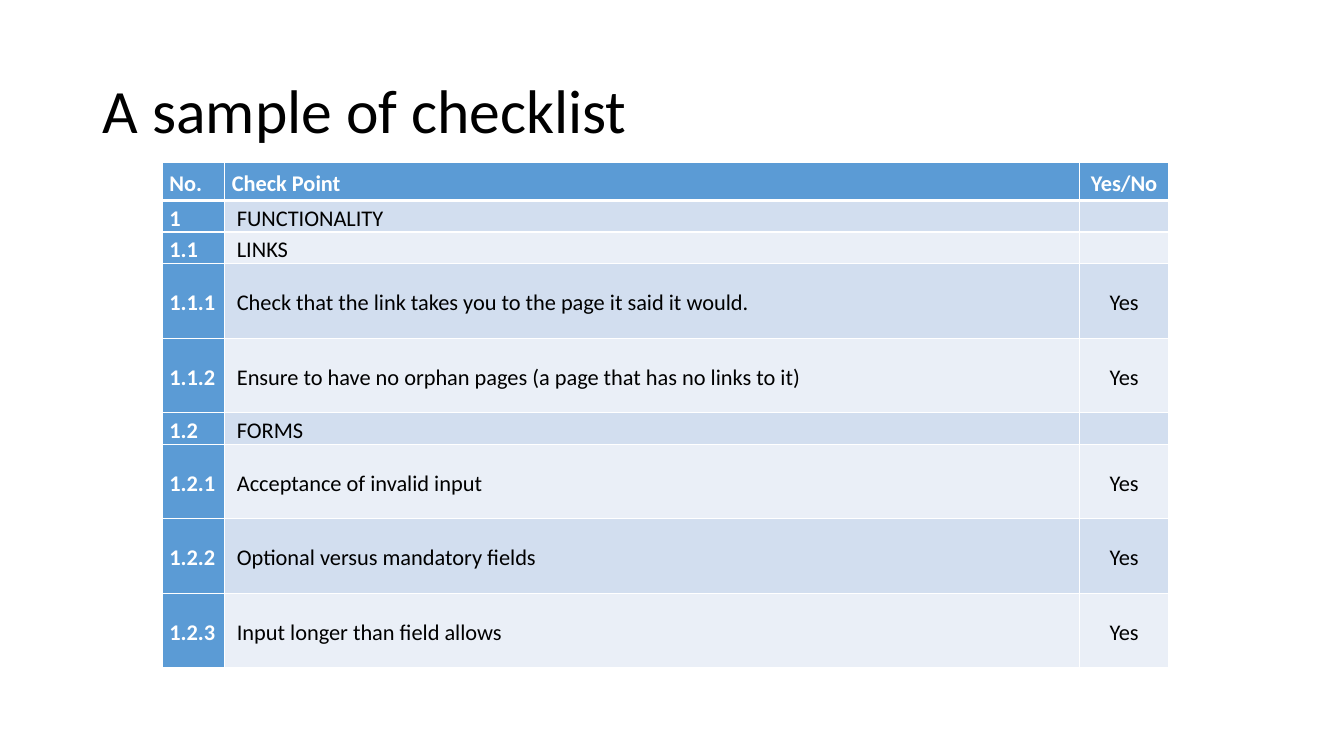
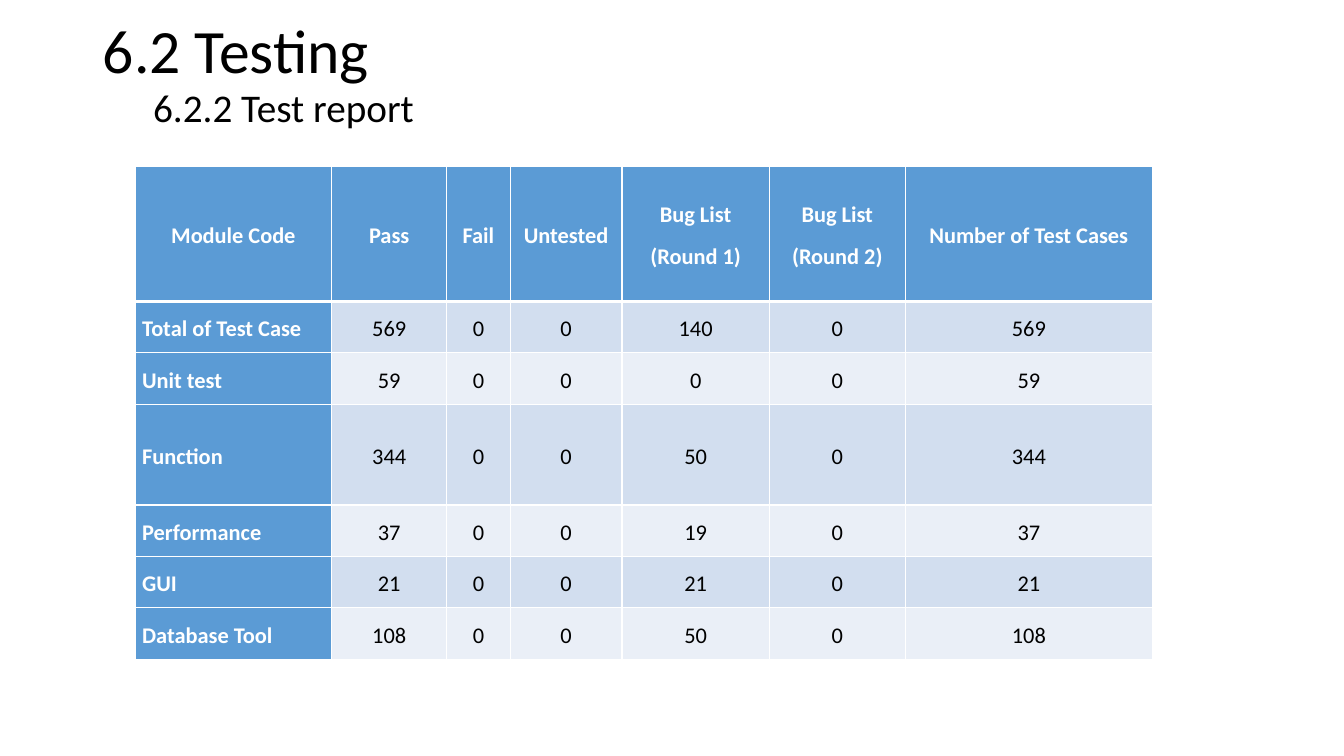
from lxml import etree
from pptx import Presentation
from pptx.dml.color import RGBColor
from pptx.enum.text import MSO_ANCHOR, MSO_AUTO_SIZE, PP_ALIGN
from pptx.oxml.ns import qn
from pptx.util import Inches, Pt

LEFT, CENTER = PP_ALIGN.LEFT, PP_ALIGN.CENTER
MIDDLE = MSO_ANCHOR.MIDDLE
NO_FIT = MSO_AUTO_SIZE.NONE
TITLE_ONLY = 5

COLORS = {
    "text": "000000",
    "light": "FFFFFF",
    "accent": "5B9BD5",
    "odd_band": "D2DEEF",
    "even_band": "EAEFF7",
}
FONT = "Calibri"
TABLE_SIZE = 16
CELL_FORMAT = {
    "margin_left": Inches(0.07),
    "margin_right": Inches(0.07),
    "margin_top": 0,
    "margin_bottom": 0,
    "vertical_anchor": MIDDLE,
}
CELL_SPACING = {"line_spacing": 1.15, "space_before": Pt(4), "space_after": Pt(4)}

CHECKLIST = {
    "box": (1.61, 1.61, 9.98, 5.01),
    "columns": [0.62, 8.48, 0.88],
    "heights": [0.38, 0.3, 0.3, 0.74, 0.74, 0.3, 0.74, 0.74, 0.74],
    "header_aligns": [LEFT, LEFT, CENTER],
    "body_aligns": [LEFT, LEFT, CENTER],
    "rows": [
        ["No.", "Check Point", "Yes/No"],
        ["1", " FUNCTIONALITY", ""],
        ["1.1", " LINKS", ""],
        ["1.1.1", " Check that the link takes you to the page it said it would.", "Yes"],
        ["1.1.2", " Ensure to have no orphan pages (a page that has no links to it)", "Yes"],
        ["1.2", " FORMS", ""],
        ["1.2.1", " Acceptance of invalid input", "Yes"],
        ["1.2.2", " Optional versus mandatory fields", "Yes"],
        ["1.2.3", " Input longer than field allows", "Yes"],
    ],
}
TEST_REPORT = {
    "box": (1.34, 1.65, 10.09, 4.89),
    "columns": [1.95, 1.14, 0.63, 1.11, 1.46, 1.35, 2.45],
    "heights": [1.34, 0.51, 0.51, 1, 0.51, 0.51, 0.51],
    "header_aligns": [CENTER] * 7,
    "body_aligns": [LEFT] + [CENTER] * 6,
    "rows": [
        ["Module Code", "Pass", "Fail", "Untested", "Bug List\n(Round 1)",
         "Bug List\n(Round 2)", "Number of Test Cases"],
        ["Total of Test Case", "569", "0", "0", "140", "0", "569"],
        ["Unit test", "59", "0", "0", "0", "0", "59"],
        ["Function", "344", "0", "0", "50", "0", "344"],
        ["Performance", "37", "0", "0", "19", "0", "37"],
        ["GUI", "21", "0", "0", "21", "0", "21"],
        ["Database Tool", "108", "0", "0", "50", "0", "108"],
    ],
}


def set_values(target, values):
    for name, value in values.items():
        setattr(target, name, value)


def write_span(para, text, size, color="text", bold=False):
    span = para.add_run()
    span.text = text
    set_values(span.font, {"name": FONT, "size": Pt(size), "bold": bold})
    span.font.color.rgb = RGBColor.from_string(COLORS[color])


def add_page(deck, title, box):
    """Add a page with its title in the given box."""
    page = deck.slides.add_slide(deck.slide_layouts[TITLE_ONLY])
    holder = page.shapes.title
    set_values(holder, dict(zip(("left", "top", "width", "height"), map(Inches, box))))
    set_values(holder.text_frame, {"vertical_anchor": MIDDLE, "word_wrap": True,
                                   "auto_size": NO_FIT})
    para = holder.text_frame.paragraphs[0]
    set_values(para, {"alignment": LEFT, "line_spacing": 0.9})
    write_span(para, title, 44)
    return page


def add_subtitle(page, text, box):
    frame = page.shapes.add_textbox(*map(Inches, box)).text_frame
    frame.word_wrap = False
    write_span(frame.paragraphs[0], text, 28)


def add_borders(cell, widths):
    """Draw light borders; widths map the sides L, R, T, B to points."""
    properties = cell._tc.get_or_add_tcPr()
    for side, width in widths.items():
        line = etree.SubElement(properties, qn(f"a:ln{side}"), w=str(Pt(width)))
        fill = etree.SubElement(line, qn("a:solidFill"))
        etree.SubElement(fill, qn("a:srgbClr"), val=COLORS["light"])


def fill_cell(cell, text, align, row, column):
    heading = row == 0 or column == 0
    set_values(cell, CELL_FORMAT)
    # A thick line separates the header from the body
    add_borders(cell, {"L": 1, "R": 1, "T": 3 if row == 1 else 1, "B": 3 if row == 0 else 1})
    band = "accent" if heading else "odd_band" if row % 2 else "even_band"
    cell.fill.solid()
    cell.fill.fore_color.rgb = RGBColor.from_string(COLORS[band])
    frame = cell.text_frame
    for index, line in enumerate(text.split("\n")):
        para = frame.add_paragraph() if index else frame.paragraphs[0]
        set_values(para, {"alignment": align, **CELL_SPACING})
        if line:
            write_span(para, line, TABLE_SIZE, "light" if heading else "text", heading)
        else:
            # Keeps an empty cell from stretching its row
            etree.SubElement(para._p, qn("a:endParaRPr"), sz=str(TABLE_SIZE * 100))


def add_banded_table(page, content):
    rows, columns = content["rows"], content["columns"]
    table = page.shapes.add_table(len(rows), len(columns),
                                  *map(Inches, content["box"])).table
    for column, width in zip(table.columns, columns):
        column.width = Inches(width)
    for row, height in zip(table.rows, content["heights"]):
        row.height = Inches(height)
    for row, texts in enumerate(rows):
        aligns = content["body_aligns" if row else "header_aligns"]
        for column, (text, align) in enumerate(zip(texts, aligns)):
            fill_cell(table.cell(row, column), text, align, row, column)


def main():
    deck = Presentation()
    set_values(deck, {"slide_width": Inches(13.33), "slide_height": Inches(7.5)})

    # Checklist
    page = add_page(deck, "A sample of checklist", (0.92, 0.4, 11.5, 1.45))
    add_banded_table(page, CHECKLIST)

    # Test report
    page = add_page(deck, "6.2 Testing", (0.92, 0, 11.5, 1.07))
    add_subtitle(page, "6.2.2 Test report", (1.42, 0.78, 2.82, 0.57))
    add_banded_table(page, TEST_REPORT)

    deck.save("out.pptx")


if __name__ == "__main__":
    main()
